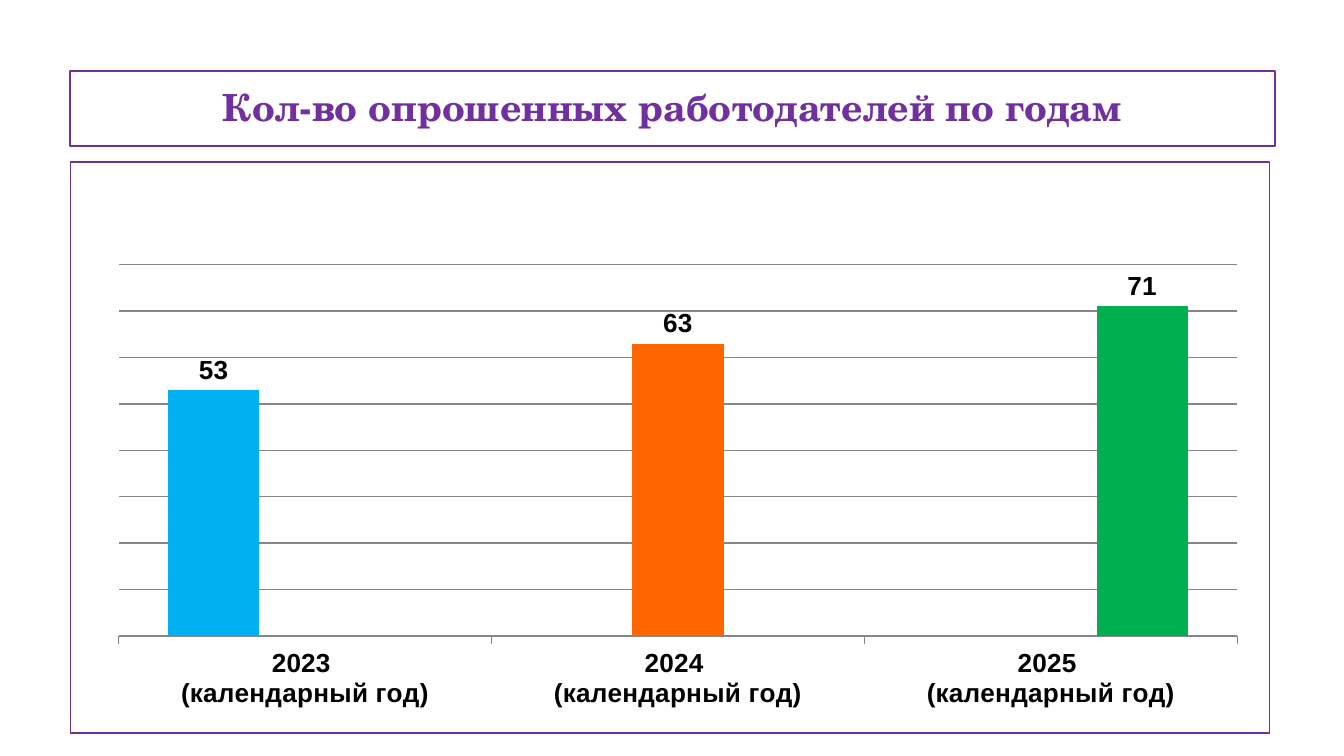
from lxml import etree
from pptx import Presentation
from pptx.chart.data import CategoryChartData
from pptx.dml.color import RGBColor
from pptx.enum.chart import XL_CHART_TYPE, XL_LABEL_POSITION, XL_TICK_LABEL_POSITION, XL_TICK_MARK
from pptx.enum.shapes import MSO_SHAPE
from pptx.enum.text import MSO_ANCHOR, PP_ALIGN
from pptx.oxml import parse_xml
from pptx.oxml.ns import nsdecls, qn
from pptx.util import Inches, Pt

COLUMNS = XL_CHART_TYPE.COLUMN_CLUSTERED
OUTSIDE_END = XL_LABEL_POSITION.OUTSIDE_END
NO_LABELS = XL_TICK_LABEL_POSITION.NONE
TICK_OUT, TICK_NONE = XL_TICK_MARK.OUTSIDE, XL_TICK_MARK.NONE
RECT = MSO_SHAPE.RECTANGLE
TOP = MSO_ANCHOR.TOP
CENTER = PP_ALIGN.CENTER

COLORS = {
    "white": "FFFFFF", "black": "000000", "purple": "7030A0",
    "outline": "808080", "grid": "868686",
    "blue": "00B0F0", "orange": "FF6600", "green": "00B050",
}
# Year, number of employers surveyed, bar colour
SURVEYS = [("2023", 53, "blue"), ("2024", 63, "orange"), ("2025", 71, "green")]


def rgb(name):
    return RGBColor.from_string(COLORS[name])


def format_font(font, size, color="black", name="Arial", bold=True):
    font.size, font.name, font.bold = Pt(size), name, bold
    font.color.rgb = rgb(color)


def add_text(tf, text, align=CENTER, outline=None, **fmt):
    p = tf.paragraphs[0]
    p.alignment = align
    r = p.add_run()
    r.text = text
    format_font(r.font, **fmt)
    if outline:
        ln = parse_xml(
            f'<a:ln {nsdecls("a")} w="{Pt(1)}"><a:solidFill>'
            f'<a:srgbClr val="{COLORS[outline]}"/></a:solidFill></a:ln>')
        r.font._element.insert(0, ln)


def area_format(fill, line=None, width=0.75):
    """Chart area properties: a solid fill and an optional border."""
    def solid(name):
        return f'<a:solidFill><a:srgbClr val="{COLORS[name]}"/></a:solidFill>'
    border = f'<a:ln w="{Pt(width)}">{solid(line)}</a:ln>' if line else "<a:ln><a:noFill/></a:ln>"
    return parse_xml(f'<c:spPr {nsdecls("c", "a")}>{solid(fill)}{border}</c:spPr>')


class SlideBuilder:
    def __init__(self, prs):
        self.s = prs.slides.add_slide(prs.slide_layouts[6])
        self.frame = "purple"

    def title(self, text, x, y, w, h):
        sp = self.s.shapes.add_shape(RECT, Inches(x), Inches(y), Inches(w), Inches(h))
        sp.shadow.inherit = False
        sp.fill.solid()
        sp.fill.fore_color.rgb = rgb("white")
        sp.line.color.rgb = rgb(self.frame)
        sp.line.width = Pt(1)
        tf = sp.text_frame
        tf.word_wrap = True
        tf.vertical_anchor = TOP
        tf.margin_left = tf.margin_right = tf.margin_top = tf.margin_bottom = Inches(0.1)
        add_text(tf, text, size=20, color=self.frame, name="TeX Gyre Schola", outline="outline")

    def column_chart(self, surveys, x, y, w, h):
        # One series per year, so each bar has its own colour
        data = CategoryChartData()
        data.categories = [f"{year} \n(календарный год)" for year, _, _ in surveys]
        for i, (_, value, _) in enumerate(surveys):
            values = [value if i == j else None for j in range(len(surveys))]
            data.add_series(f"Series {i + 1}", values)
        chart = self.s.shapes.add_chart(
            COLUMNS, Inches(x), Inches(y), Inches(w), Inches(h), data).chart
        chart.has_title = chart.has_legend = False
        format_font(chart.font, 11)

        # Bars and labels
        plot = chart.plots[0]
        plot.gap_width, plot.overlap = 108, 0
        plot.vary_by_categories = False
        for series, (_, _, color) in zip(plot.series, surveys):
            series.format.fill.solid()
            series.format.fill.fore_color.rgb = rgb(color)
            labels = series.data_labels
            labels.show_value = True
            labels.position = OUTSIDE_END
            format_font(labels.font, 14)

        # Axes
        axis = chart.category_axis
        axis.major_tick_mark = TICK_OUT
        axis.format.line.color.rgb = rgb("grid")
        format_font(axis.tick_labels.font, 14)
        scale = chart.value_axis
        scale.minimum_scale, scale.maximum_scale, scale.major_unit = 0, 80, 10
        scale.major_tick_mark = TICK_NONE
        scale.tick_label_position = NO_LABELS
        scale.has_major_gridlines = True
        scale.major_gridlines.format.line.color.rgb = rgb("grid")
        scale.visible = False
        self.chart_area(chart)

    def chart_area(self, chart):
        # Frame, background and plot position
        space = chart._chartSpace
        space.find(qn("c:chart")).addnext(area_format("white", self.frame))
        corners = etree.Element(qn("c:roundedCorners"), val="0")
        space.find(qn("c:date1904")).addnext(corners)
        plot_area = space.find(qn("c:chart")).find(qn("c:plotArea"))
        plot_area.append(area_format("white"))
        for old in plot_area.findall(qn("c:layout")):
            plot_area.remove(old)
        layout = etree.Element(qn("c:layout"))
        manual = etree.SubElement(layout, qn("c:manualLayout"))
        for tag, val in [("layoutTarget", "inner"), ("xMode", "edge"), ("yMode", "edge"),
                         ("x", 0.04), ("y", 0.18), ("w", 14 / 15), ("h", 0.65)]:
            etree.SubElement(manual, qn(f"c:{tag}"), val=str(val))
        plot_area.insert(0, layout)


def main():
    prs = Presentation()
    # Widescreen, 16:9
    prs.slide_width = Inches(10)
    prs.slide_height = prs.slide_width * 9 // 16
    slide = SlideBuilder(prs)
    slide.title("Кол-во опрошенных работодателей по годам", 0.52, 0.53, 8.97, 0.56)
    slide.column_chart(SURVEYS, 0.52, 1.2, 8.93, 4.26)
    prs.save("out.pptx")


if __name__ == "__main__":
    main()
